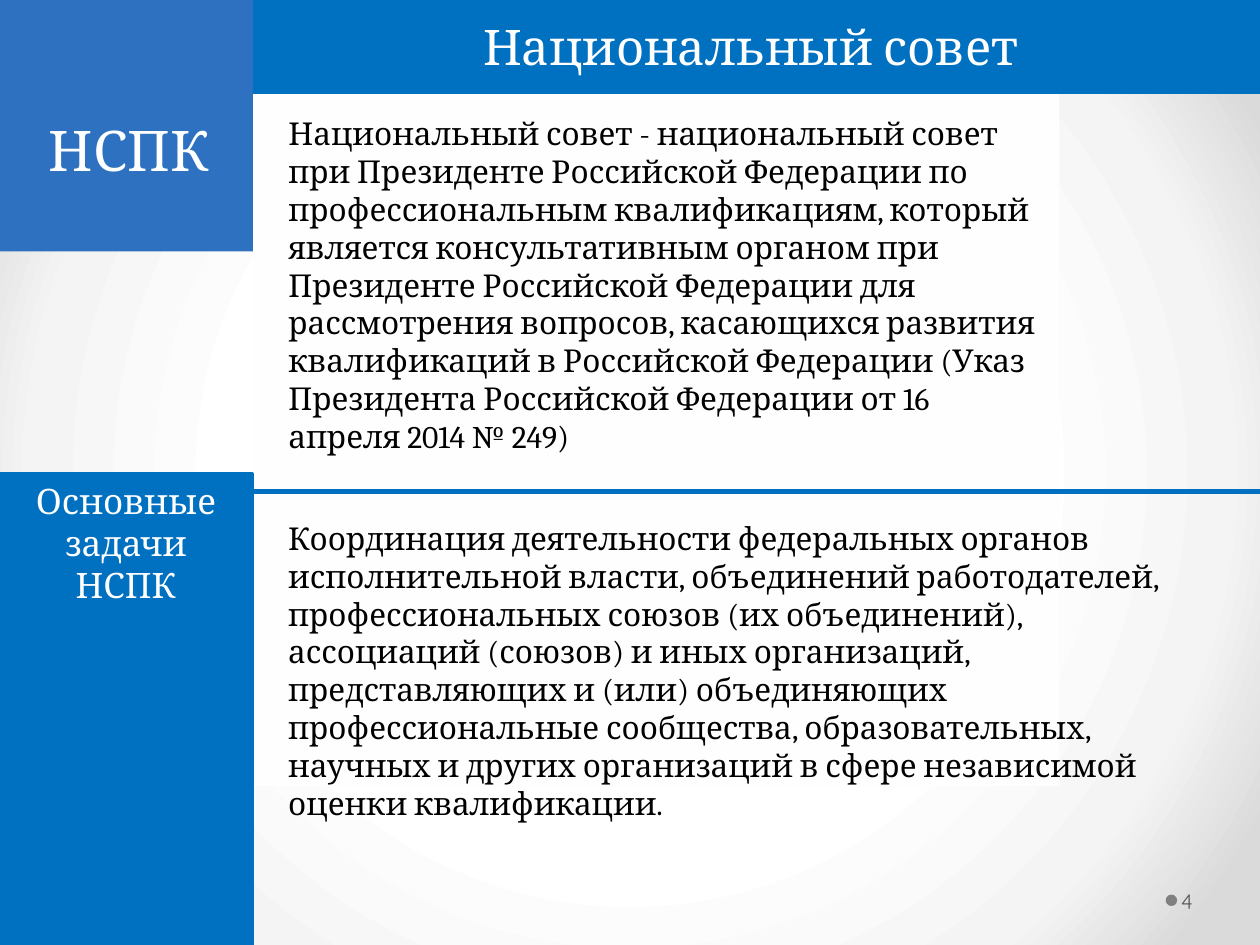
from lxml.etree import SubElement
from pptx import Presentation
from pptx.dml.color import RGBColor
from pptx.enum.shapes import MSO_CONNECTOR, MSO_SHAPE
from pptx.enum.text import MSO_ANCHOR, MSO_AUTO_SIZE, PP_ALIGN
from pptx.oxml import parse_xml
from pptx.oxml.ns import nsdecls, qn
from pptx.util import Cm, Pt

BLUE = RGBColor(0x00, 0x70, 0xC0)
CORNER_BLUE = RGBColor(0x2D, 0x71, 0xC0)
PANEL = RGBColor(0xFE, 0xFE, 0xFE)
WHITE = RGBColor(0xFF, 0xFF, 0xFF)
BLACK = RGBColor(0x00, 0x00, 0x00)
DOT_GREY = RGBColor(0x80, 0x80, 0x80)
NUMBER_GREY = RGBColor(0x59, 0x59, 0x59)
BACKGROUND_STOPS = ((50, "FFFFFF"), (76, "F4F4F4"), (92, "DADADA"))

WIDTH, HEIGHT = 25.4, 19.05
SIDE = 5.08
TEXT_LEFT = 5.56

DEFINITION = (
    "Национальный совет - национальный совет при Президенте Российской Федерации "
    "по профессиональным квалификациям, который является консультативным органом "
    "при Президенте Российской Федерации для рассмотрения вопросов, касающихся "
    "развития квалификаций в Российской Федерации (Указ Президента Российской "
    "Федерации от 16 апреля 2014 № 249)"
)
TASKS = (
    "Координация деятельности федеральных органов исполнительной власти, "
    "объединений работодателей, профессиональных союзов (их объединений), "
    "ассоциаций (союзов) и иных организаций, представляющих и (или) объединяющих "
    "профессиональные сообщества, образовательных, научных и других организаций "
    "в сфере независимой оценки квалификации."
)


def cm_box(box):
    return [Cm(v) for v in box]


def set_background(s):
    """Radial gradient that darkens towards the corners."""
    s.background.fill.gradient()
    old = s.element.find(".//" + qn("a:gradFill"))
    stops = "".join(
        f'<a:gs pos="{pos * 1000}"><a:srgbClr val="{color}"/></a:gs>'
        for pos, color in BACKGROUND_STOPS
    )
    old.getparent().replace(old, parse_xml(
        f'<a:gradFill {nsdecls("a")} rotWithShape="1"><a:gsLst>{stops}</a:gsLst>'
        '<a:path path="circle"><a:fillToRect l="50000" t="50000" r="50000" b="50000"/>'
        '</a:path></a:gradFill>'
    ))


def write(tf, text, size, color, align=PP_ALIGN.LEFT, anchor=MSO_ANCHOR.TOP,
          font="Cambria"):
    tf.text = text
    tf.word_wrap = True
    tf.auto_size = MSO_AUTO_SIZE.NONE
    tf.vertical_anchor = anchor
    p = tf.paragraphs[0]
    p.alignment = align
    p.space_before = Pt(0)
    r = p.runs[0]
    r.font.name, r.font.size, r.font.color.rgb = font, Pt(size), color
    return p


def add_block(s, box, color, outline=False, kind=MSO_SHAPE.RECTANGLE):
    sp = s.shapes.add_shape(kind, *cm_box(box))
    sp.shadow.inherit = False
    sp.fill.solid()
    sp.fill.fore_color.rgb = color
    if outline:
        sp.line.color.rgb = color
        sp.line.width = Pt(2.25)
    else:
        sp.line.fill.background()
    return sp


def place_placeholder(sp, box):
    """Set the position and bring the placeholder in front of the blocks."""
    sp.left, sp.top, sp.width, sp.height = cm_box(box)
    sp.element.getparent().append(sp.element)
    return sp.text_frame


def add_header(s, left, top, width, height):
    banner = add_block(s, (left + SIDE, top, width - SIDE, height), BLUE, True)
    write(banner.text_frame, "Национальный совет ", 28, WHITE,
          PP_ALIGN.CENTER, MSO_ANCHOR.MIDDLE)


def add_corner_title(s, left, top, size):
    add_block(s, (left, top, size, size), CORNER_BLUE)
    tf = place_placeholder(s.shapes.title, (left + 0.5, top + 0.58, 4.22, 4.22))
    p = write(tf, "НСПК", 32, WHITE, PP_ALIGN.CENTER, MSO_ANCHOR.MIDDLE)
    p.line_spacing = Pt(58)


def add_definition(s, box):
    tf = place_placeholder(s.placeholders[1], box)
    p = write(tf, DEFINITION, 18, BLACK)
    pPr = p._p.get_or_add_pPr()
    pPr.set("marL", "0")
    pPr.set("indent", "0")
    SubElement(pPr, qn("a:buNone"))


def add_tasks(s, left, top, width, height):
    sidebar = add_block(s, (left, top, SIDE, height), BLUE, True)
    write(sidebar.text_frame, "Основные задачи НСПК", 20, WHITE, PP_ALIGN.CENTER)

    y = Cm(top + 0.36)
    rule = s.shapes.add_connector(
        MSO_CONNECTOR.STRAIGHT, Cm(left + SIDE), y, Cm(left + width), y)
    rule.line.color.rgb = BLUE
    rule.line.width = Pt(2.75)
    SubElement(rule.element.spPr, qn("a:effectLst"))

    tb = s.shapes.add_textbox(*cm_box((left + TEXT_LEFT, top + 0.79, 19.1, 5.64)))
    write(tb.text_frame, TASKS, 18, BLACK)


def add_slide_number(s, left, top, width, height):
    dot = 0.23
    add_block(s, (left, top + (height - dot) / 2 - 0.01, dot, dot), DOT_GREY,
              kind=MSO_SHAPE.OVAL)
    tb = s.shapes.add_textbox(*cm_box((left + dot, top, width - dot, height)))
    write(tb.text_frame, "4", 12, NUMBER_GREY, anchor=MSO_ANCHOR.MIDDLE,
          font="Quicksand")
    tb.text_frame.margin_left = Cm(0.08)
    tb.text_frame.margin_right = Cm(0.13)


def main():
    prs = Presentation()
    prs.slide_width, prs.slide_height = Cm(WIDTH), Cm(HEIGHT)
    s = prs.slides.add_slide(prs.slide_layouts[1])
    set_background(s)
    add_block(s, (5.1, 0, 16.26, 15.85), PANEL)
    add_header(s, 0, 0, WIDTH, 1.85)
    add_corner_title(s, 0, -0.03, 5.1)
    add_definition(s, (TEXT_LEFT, 2.18, 15.77, 7.14))
    add_tasks(s, 0, 9.55, WIDTH, HEIGHT - 9.55)
    add_slide_number(s, 23.5, 17.65, 1.78, 1.02)
    prs.save("out.pptx")


if __name__ == "__main__":
    main()
